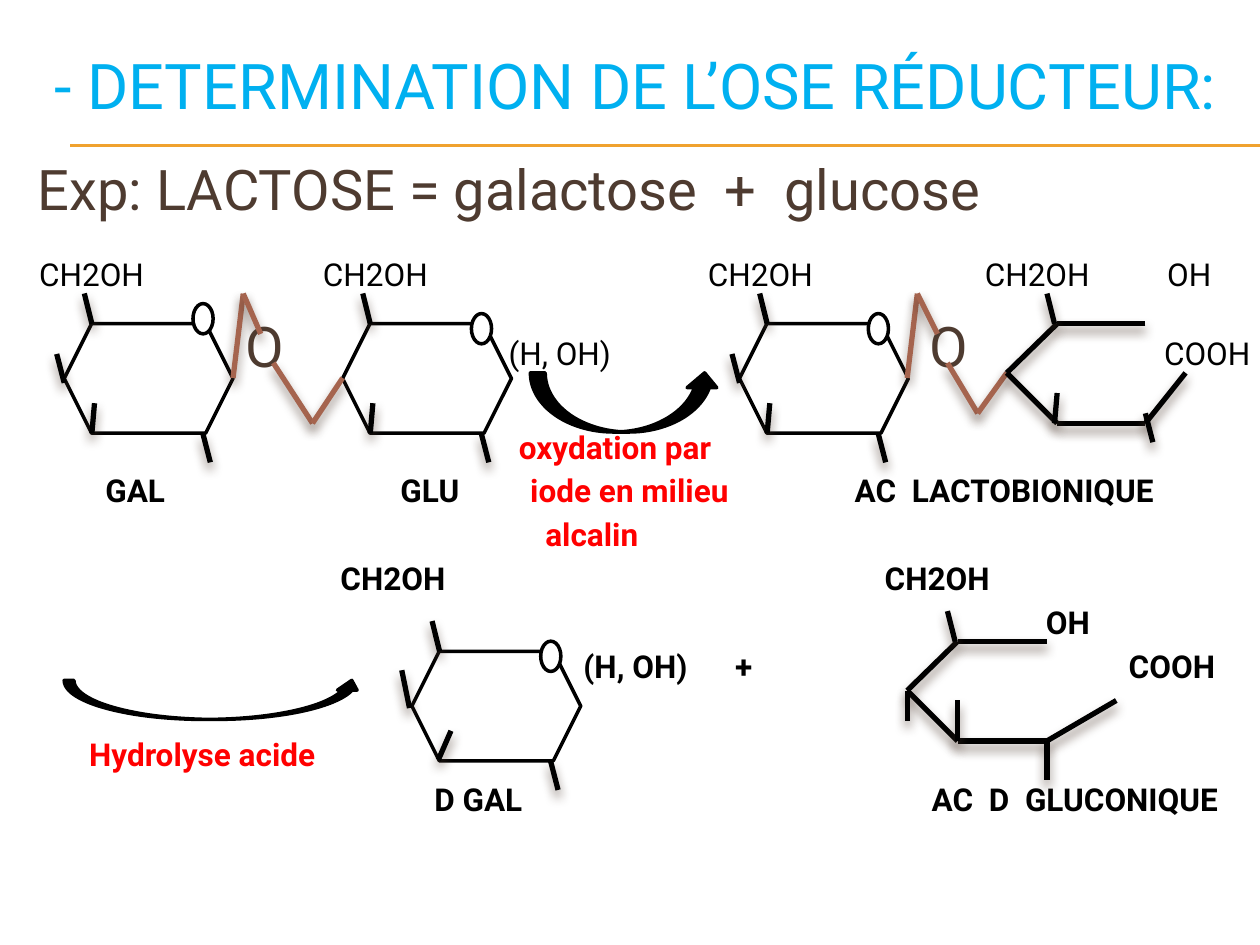
from itertools import pairwise

from lxml.etree import SubElement
from pptx import Presentation
from pptx.dml.color import RGBColor
from pptx.enum.shapes import MSO_CONNECTOR, MSO_SHAPE
from pptx.enum.text import MSO_ANCHOR
from pptx.oxml.ns import qn
from pptx.util import Pt

BLACK = RGBColor(0, 0, 0)
WHITE = RGBColor(255, 255, 255)
BLUE = RGBColor(0x00, 0xB0, 0xF0)
RED = RGBColor(255, 0, 0)
BROWN = RGBColor(0x4E, 0x3B, 0x30)
RUST = RGBColor(0xA5, 0x64, 0x4E)
GOLD = RGBColor(0xF0, 0xA2, 0x2E)
FONT = "Roboto"

TOP = ((15.8, 0), (11.5, -17.3))
LEFT = ((0, 33.8), (-4.3, 17.3))
LOWER_LEFT = ((15.8, 62.6), (17.3, 45.4))
LOWER_RIGHT = ((79.2, 62.6), (83.5, 79.2))
RINGS = [
    (36.7, 185, -11.5, [TOP, LEFT, LOWER_LEFT, LOWER_RIGHT]),
    (195.8, 185, -5.8, [TOP, LOWER_LEFT, LOWER_RIGHT]),
    (422.6, 185, -5.8, [TOP, LEFT, LOWER_LEFT, LOWER_RIGHT]),
    (235.4, 372.2, -5.8, [TOP, ((-1.4, 32.4), (-5.8, 10.8)),
                          ((15.1, 62), (22.3, 45.4)), LOWER_RIGHT]),
]
GLYCOSIDIC_BONDS = [
    [(133.2, 216), (139, 167.8), (149, 190.8)],
    [(156.2, 207.4), (178.6, 241.9), (195.8, 216)],
    [(518.4, 216), (524.2, 167.8), (535.7, 190.8)],
    [(541.4, 207.4), (558.7, 236.2), (575.3, 213.1)],
]
OPEN_CHAINS = [
    [(654.5, 185), (604.1, 185), (575.3, 213.1), (604.1, 241.9),
     (654.5, 241.9), (677.5, 213.1)],
    [(602.6, 185), (598.3, 167.8)],
    [(602.6, 241.9), (604.1, 224.6)],
    [(658.8, 252.7), (654.5, 236.2)],
    [(598.3, 366.5), (547.2, 366.5), (518.4, 394.6), (547.2, 423.4),
     (598.3, 423.4), (637.9, 400.3)],
    [(545.8, 366.5), (541.4, 349.2)],
    [(518.4, 394.6), (518.4, 411.8)],
    [(547.2, 423.4), (547.2, 400.3)],
    [(598.3, 423.4), (598.3, 445.7)],
]
PLAIN_LABELS = [
    ("CH2OH", 22.4, 156.5), ("CH2OH", 184.6, 156.5), ("CH2OH", 404.6, 156.5),
    ("CH2OH", 562.8, 156.5), ("OH", 667, 156.5),
    ("(H, OH)", 290.6, 201.7), ("COOH", 665.2, 201.7),
]
BOLD_LABELS = [
    ("GAL", 60.2, 280), ("GLU", 228.8, 280), ("AC  LACTOBIONIQUE", 488.4, 280),
    ("CH2OH", 194.6, 330.3), ("CH2OH", 505.6, 330.3), ("OH", 597.6, 355.5),
    ("(H, OH)", 333.4, 380.6), ("+", 420, 380.6), ("COOH", 645, 380.6),
    ("D GAL", 248.2, 456.6), ("AC  D  GLUCONIQUE", 532.4, 456.6),
]
REACTION_LABELS = [
    ("oxydation par", 296.6, 255.2), ("iode en milieu", 303, 280),
    ("alcalin", 311.6, 305.2), ("Hydrolyse acide", 51, 431),
]


def add_label(slide, text, x, mid, size=18, color=BLACK, bold=False):
    width, height = len(text) * size * 0.7, size * 1.2
    box = slide.shapes.add_textbox(Pt(x), Pt(mid - height / 2), Pt(width), Pt(height))
    tf = box.text_frame
    tf.margin_left = tf.margin_right = tf.margin_top = tf.margin_bottom = 0
    tf.vertical_anchor = MSO_ANCHOR.MIDDLE
    tf.word_wrap = False
    r = tf.paragraphs[0].add_run()
    r.text = text
    r.font.name, r.font.size, r.font.bold = FONT, Pt(size), bold
    r.font.color.rgb = color


def add_line(slide, start, end, color, width):
    line = slide.shapes.add_connector(
        MSO_CONNECTOR.STRAIGHT, *(Pt(v) for v in (*start, *end)))
    line.line.color.rgb = color
    line.line.width = Pt(width)
    return SubElement(line._element.spPr, qn("a:effectLst"))


def add_bonds(slide, points, color=BLACK):
    for start, end in pairwise(points):
        effects = add_line(slide, start, end, color, 3)
        shadow = SubElement(effects, qn("a:outerShdw"), blurRad=str(Pt(6)),
                            dist=str(Pt(4)), dir="5400000", rotWithShape="0")
        tint = SubElement(shadow, qn("a:srgbClr"), val=str(BROWN))
        SubElement(tint, qn("a:alpha"), val="60000")


def add_figure(slide, kind, x, y, width, height, fill):
    sp = slide.shapes.add_shape(kind, Pt(x), Pt(y), Pt(width), Pt(height))
    sp.shadow.inherit = False
    sp.fill.solid()
    sp.fill.fore_color.rgb = fill
    sp.line.color.rgb = BLACK
    sp.line.width = Pt(2)


def add_ring(slide, x, y, oxygen_top, stubs):
    add_figure(slide, MSO_SHAPE.HEXAGON, x, y, 96.5, 62.6, WHITE)
    for stub in stubs:
        add_bonds(slide, [(x + dx, y + dy) for dx, dy in stub])
    add_figure(slide, MSO_SHAPE.OVAL, x + 73.6, y + oxygen_top, 11.5, 17.3, WHITE)


def main():
    prs = Presentation()
    prs.slide_width, prs.slide_height = Pt(720), Pt(540)
    slide = prs.slides.add_slide(prs.slide_layouts[6])

    for y in (82.8, 83.5):
        add_line(slide, (40.3, y), (720, y), GOLD, 0.75)
    add_label(slide, "- DETERMINATION DE L’OSE RÉDUCTEUR:", 31, 48.4, 36, BLUE)
    add_label(slide, "Exp: LACTOSE = galactose  +  glucose", 21.6, 107.5, 32, BROWN)
    for x in (140.6, 531):
        add_label(slide, "O", x, 197.4, 32, BROWN)
    for label in PLAIN_LABELS:
        add_label(slide, *label)
    for label in BOLD_LABELS:
        add_label(slide, *label, bold=True)
    for label in REACTION_LABELS:
        add_label(slide, *label, color=RED, bold=True)

    for ring in RINGS:
        add_ring(slide, *ring)
    for points in GLYCOSIDIC_BONDS:
        add_bonds(slide, points, RUST)
    for points in OPEN_CHAINS:
        add_bonds(slide, points)
    for box in ((303.1, 213.1, 108, 33.8), (36.7, 388.8, 169.9, 22.3)):
        add_figure(slide, MSO_SHAPE.CURVED_UP_ARROW, *box, BLACK)

    prs.save("out.pptx")


if __name__ == "__main__":
    main()
